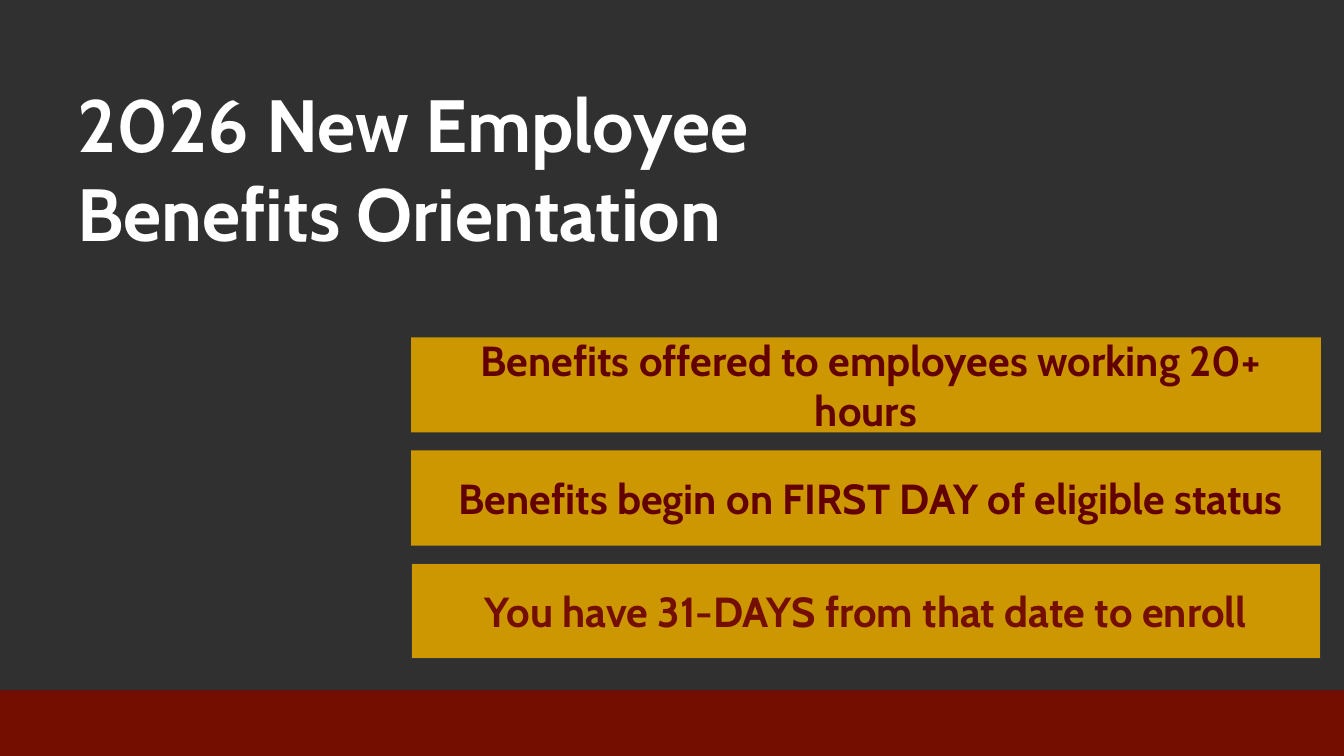
import pptx
import pptx.util
import pptx.dml.color
import pptx.enum.shapes
import pptx.enum.text
from pptx.util import Cm


def rgb(value):
    return pptx.dml.color.RGBColor.from_string(value)


def add_bar(left, top, width, height, fill):
    sp = s.shapes.add_shape(pptx.enum.shapes.MSO_SHAPE.RECTANGLE,
                            Cm(left), Cm(top), Cm(width), Cm(height))
    sp.shadow.inherit = False
    sp.fill.solid()
    sp.fill.fore_color.rgb = rgb(fill)
    sp.line.fill.background()
    return sp


prs = pptx.Presentation()
prs.slide_width = Cm(33.87)
prs.slide_height = Cm(19.05)
s = prs.slides.add_slide(prs.slide_layouts[5])
s.background.fill.solid()
s.background.fill.fore_color.rgb = rgb("262626")

add_bar(-0.13, -0.03, 34.01, 17.42, "303030")
add_bar(0, 17.4, 33.87, 1.65, "730E00")

title = s.shapes.title
s.shapes._spTree.append(title._element)
title.left, title.top, title.width, title.height = Cm(1.7), Cm(0.69), Cm(30.48), Cm(7.04)
tf = title.text_frame
tf.word_wrap = True
tf.auto_size = pptx.enum.text.MSO_AUTO_SIZE.NONE
tf.vertical_anchor = pptx.enum.text.MSO_ANCHOR.MIDDLE
p = tf.paragraphs[0]
p.alignment = pptx.enum.text.PP_ALIGN.LEFT
for i, line in enumerate(["2026 New Employee ", "Benefits Orientation"]):
    if i:
        p.add_line_break()
    r = p.add_run()
    r.text = line
    r.font.name = "Cabin"
    r.font.size = pptx.util.Pt(52.8)
    r.font.bold = True
    r.font.color.rgb = rgb("FFFFFF")

facts = [
    (" Benefits offered to employees working 20+ hours", "630101"),
    (" Benefits begin on FIRST DAY of eligible status", "630101"),
    ("You have 31-DAYS from that date to enroll", "730E00"),
]
for i, (text, color) in enumerate(facts):
    sp = add_bar(10.36, 8.5 + 2.85 * i, 22.93, 2.4, "CC9701")
    tf = sp.text_frame
    tf.word_wrap = True
    tf.vertical_anchor = pptx.enum.text.MSO_ANCHOR.MIDDLE
    p = tf.paragraphs[0]
    p.alignment = pptx.enum.text.PP_ALIGN.CENTER
    r = p.add_run()
    r.text = text
    r.font.name = "Cabin"
    r.font.size = pptx.util.Pt(30)
    r.font.bold = True
    r.font.color.rgb = rgb(color)

sp.line.color.rgb = rgb("363639")
sp.line.width = pptx.util.Pt(0.75)

prs.save("out.pptx")
